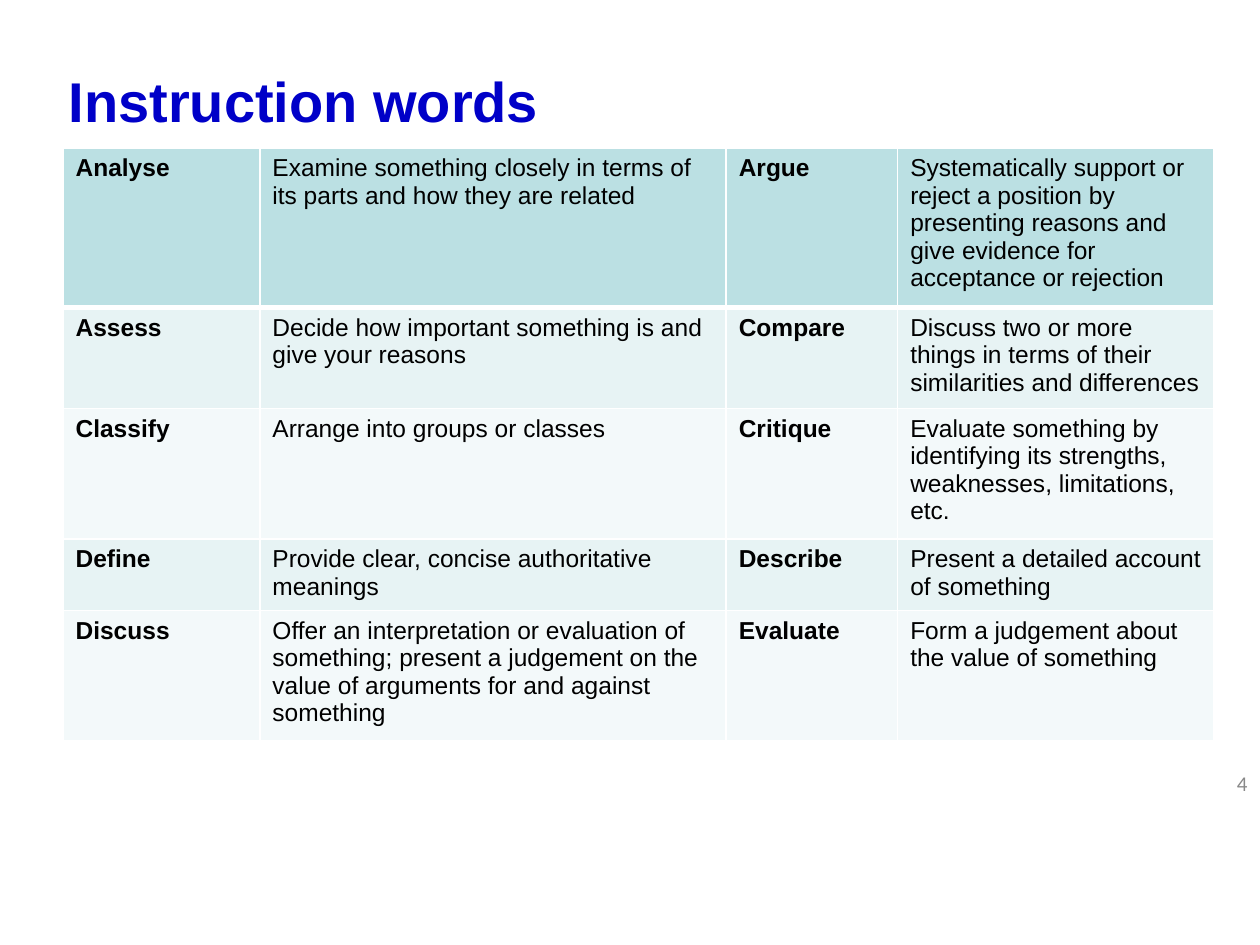
from typing import NamedTuple

from lxml import etree
from pptx import Presentation
from pptx.dml.color import RGBColor
from pptx.enum import text as t
from pptx.oxml import ns
from pptx.util import Pt

BLUE = RGBColor(0x00, 0x00, 0xC8)
BLACK = RGBColor(0x00, 0x00, 0x00)
GREY = RGBColor(0x89, 0x89, 0x89)
WHITE = RGBColor(0xFF, 0xFF, 0xFF)
HEAD = RGBColor(0xBB, 0xE0, 0xE3)
BANDS = (RGBColor(0xF3, 0xF9, 0xFA), RGBColor(0xE7, 0xF3, 0xF4))


class Pair(NamedTuple):
    """Two instruction words side by side, each with its meaning."""
    left: str
    sense: str
    right: str
    gloss: str


PAIRS = [
    Pair("Analyse", "Examine something closely in terms of its parts and how they are related",
         "Argue", "Systematically support or reject a position by presenting reasons "
         "and give evidence for acceptance or rejection"),
    Pair("Assess", "Decide how important something is and give your reasons",
         "Compare", "Discuss two or more things in terms of their similarities and differences"),
    Pair("Classify", "Arrange into groups or classes",
         "Critique", "Evaluate something by identifying its strengths, weaknesses, limitations, etc."),
    Pair("Define", "Provide clear, concise authoritative meanings",
         "Describe", "Present a detailed account of something"),
    Pair("Discuss", "Offer an interpretation or evaluation of something; present a judgement "
         "on the value of arguments for and against something",
         "Evaluate", "Form a judgement about the value of something"),
]
WIDTHS = (112.5, 266.5, 98, 180.8)
ROW = 29.5


def style(par, size: float, color: RGBColor, bold: bool = False, face: str = "Arial") -> None:
    font = par.font
    font.name, font.size, font.bold = face, Pt(size), bold
    font.color.rgb = color


def edge(cell, side: str, width: float) -> None:
    """Add a white border to one side; call before the cell is filled."""
    line = etree.SubElement(cell._tc.get_or_add_tcPr(), ns.qn(f"a:ln{side}"), w=str(Pt(width)))
    fill = etree.SubElement(line, ns.qn("a:solidFill"))
    etree.SubElement(fill, ns.qn("a:srgbClr"), val=str(WHITE))


def add_words(slide) -> None:
    """Draw the table; rows grow to fit their text."""
    grid = slide.shapes.add_table(len(PAIRS), len(WIDTHS), Pt(36), Pt(84.6),
                                  Pt(sum(WIDTHS)), Pt(ROW * len(PAIRS))).table
    for col, width in zip(grid.columns, WIDTHS):
        col.width = Pt(width)
    for r, pair in enumerate(PAIRS):
        for c, words in enumerate(pair):
            cell = grid.cell(r, c)
            cell.text = words
            for side in "LRTB":
                heavy = (r, side) in ((0, "B"), (1, "T"))
                edge(cell, side, 3 if heavy else 1)
            cell.fill.solid()
            cell.fill.fore_color.rgb = BANDS[r % 2] if r else HEAD
            style(cell.text_frame.paragraphs[0], 14, BLACK, bold=c % 2 == 0)


def main() -> None:
    prs = Presentation()
    prs.slide_width, prs.slide_height = Pt(720), Pt(540)
    slide = prs.slides.add_slide(prs.slide_layouts[5])

    # Title
    title = slide.shapes.title
    title.left, title.top, title.width, title.height = Pt(32), Pt(34.4), Pt(650), Pt(51)
    title.text = "Instruction words"
    title.text_frame.vertical_anchor = t.MSO_ANCHOR.TOP
    head = title.text_frame.paragraphs[0]
    head.alignment = t.PP_ALIGN.LEFT
    style(head, 32, BLUE, bold=True)

    # Slide number
    frame = slide.shapes.add_textbox(Pt(552.2), Pt(433.4), Pt(167.8), Pt(28.8)).text_frame
    frame.word_wrap = True
    frame.vertical_anchor = t.MSO_ANCHOR.MIDDLE
    num = frame.paragraphs[0]
    num.text = "4"
    num.alignment = t.PP_ALIGN.RIGHT
    style(num, 12, GREY, face="Calibri")

    # Instruction words
    add_words(slide)
    prs.save("out.pptx")


if __name__ == "__main__":
    main()
